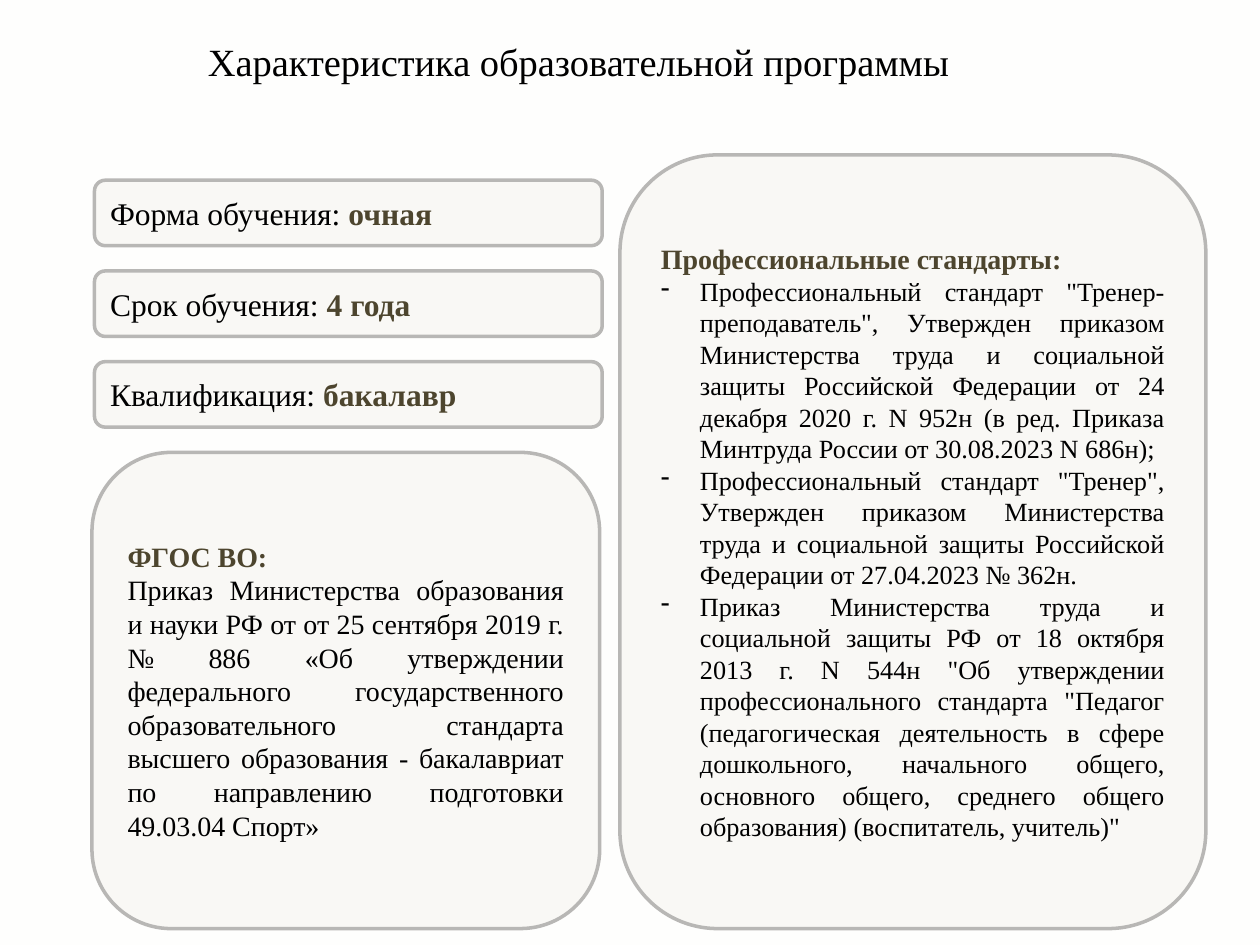
from dataclasses import dataclass

from lxml.etree import SubElement
from pptx import Presentation
from pptx.dml.color import RGBColor
from pptx.enum.shapes import MSO_SHAPE
from pptx.enum.text import MSO_ANCHOR, MSO_AUTO_SIZE, PP_ALIGN
from pptx.oxml.ns import qn
from pptx.util import Inches, Pt

COLORS = {
    "background": "FEFEFD",
    "card": "F9F8F5",
    "border": "B8B7B5",
    "text": "000000",
    "accent": "4D452E",
}
FONT = "Times New Roman"
COLUMNS, ROWS = 1000, 750  # fine grid over the whole slide
SLIDE_WIDTH, SLIDE_HEIGHT = Inches(10), Inches(7.5)
HANGING_INDENT = Inches(0.31)


@dataclass(frozen=True)
class Area:
    column: int
    row: int
    columns: int
    rows: int

    def place(self, shape) -> None:
        shape.left, shape.top, shape.width, shape.height = self.lengths()

    def lengths(self) -> tuple[int, int, int, int]:
        return (
            SLIDE_WIDTH * self.column // COLUMNS,
            SLIDE_HEIGHT * self.row // ROWS,
            SLIDE_WIDTH * self.columns // COLUMNS,
            SLIDE_HEIGHT * self.rows // ROWS,
        )


@dataclass(frozen=True)
class Span:
    text: str
    size: int
    accent: bool = False


@dataclass(frozen=True)
class Line:
    spans: tuple[Span, ...]
    justified: bool = False
    dashed: bool = False


@dataclass(frozen=True)
class Card:
    area: Area
    lines: tuple[Line, ...]


def rgb(name: str) -> RGBColor:
    return RGBColor.from_string(COLORS[name])


def add_dash(paragraph) -> None:
    properties = paragraph._p.get_or_add_pPr()
    properties.set("marL", str(HANGING_INDENT))
    properties.set("indent", str(-HANGING_INDENT))
    SubElement(properties, qn("a:buFontTx"))
    SubElement(properties, qn("a:buChar")).set("char", "-")


def write_line(paragraph, line: Line) -> None:
    paragraph.alignment = PP_ALIGN.JUSTIFY if line.justified else PP_ALIGN.LEFT
    if line.dashed:
        add_dash(paragraph)
    for span in line.spans:
        run = paragraph.add_run()
        run.text = span.text
        run.font.name = FONT
        run.font.size = Pt(span.size)
        run.font.bold = span.accent
        run.font.color.rgb = rgb("accent" if span.accent else "text")


def draw_card(slide, card: Card) -> None:
    shape = slide.shapes.add_shape(MSO_SHAPE.ROUNDED_RECTANGLE, *card.area.lengths())
    shape.shadow.inherit = False
    shape.fill.solid()
    shape.fill.fore_color.rgb = rgb("card")
    shape.line.color.rgb = rgb("border")
    shape.line.width = Pt(2)
    frame = shape.text_frame
    frame.word_wrap = True
    frame.vertical_anchor = MSO_ANCHOR.MIDDLE
    for index, line in enumerate(card.lines):
        paragraph = frame.add_paragraph() if index else frame.paragraphs[0]
        write_line(paragraph, line)


def draw_title(slide, text: str) -> None:
    title = slide.shapes.title
    Area(155, 25, 615, 47).place(title)
    frame = title.text_frame
    frame.word_wrap = False
    frame.auto_size = MSO_AUTO_SIZE.SHAPE_TO_FIT_TEXT
    frame.vertical_anchor = MSO_ANCHOR.TOP
    write_line(frame.paragraphs[0], Line((Span(text, 22),)))


# Study facts, stacked at an equal pitch
FACTS = (
    ("Форма обучения: ", "очная"),
    ("Срок обучения: ", "4 года"),
    ("Квалификация: ", "бакалавр"),
)
FIRST_FACT_ROW, FACT_PITCH = 143, 72
FACT_CARDS = tuple(
    Card(
        Area(75, FIRST_FACT_ROW + index * FACT_PITCH, 403, 52),
        (Line((Span(label, 18), Span(value, 18, accent=True))),),
    )
    for index, (label, value) in enumerate(FACTS)
)

# Federal educational standard
FEDERAL_CARD = Card(
    Area(73, FIRST_FACT_ROW + len(FACTS) * FACT_PITCH, 403, 378),
    (
        Line((Span("ФГОС ВО:", 16, accent=True),)),
        Line(
            (Span(
                "Приказ Министерства образования и науки РФ от от 25 сентября 2019 г. "
                "№ 886 «Об утверждении федерального государственного образовательного "
                "стандарта высшего образования - бакалавриат по направлению подготовки "
                "49.03.04 Спорт»",
                16,
            ),),
            justified=True,
        ),
    ),
)

# Professional standards
STANDARDS = (
    'Профессиональный стандарт "Тренер-преподаватель", Утвержден приказом '
    "Министерства труда и социальной защиты Российской Федерации от 24 декабря "
    "2020 г. N 952н (в ред. Приказа Минтруда России от 30.08.2023 N 686н);",
    'Профессиональный стандарт "Тренер", Утвержден приказом Министерства труда '
    "и социальной защиты Российской Федерации от 27.04.2023 № 362н.",
    "Приказ Министерства труда и социальной защиты РФ от 18 октября 2013 г. "
    'N 544н "Об утверждении профессионального стандарта "Педагог (педагогическая '
    "деятельность в сфере дошкольного, начального общего, основного общего, "
    'среднего общего образования) (воспитатель, учитель)"',
)
STANDARDS_CARD = Card(
    Area(492, 123, 465, 614),
    (
        Line((Span("Профессиональные стандарты:", 16, accent=True),)),
        *(Line((Span(text, 15),), justified=True, dashed=True) for text in STANDARDS),
    ),
)


def main() -> None:
    presentation = Presentation()
    presentation.slide_width, presentation.slide_height = SLIDE_WIDTH, SLIDE_HEIGHT
    slide = presentation.slides.add_slide(presentation.slide_layouts[5])
    slide.background.fill.solid()
    slide.background.fill.fore_color.rgb = rgb("background")

    draw_title(slide, "Характеристика образовательной программы")
    for card in (*FACT_CARDS, FEDERAL_CARD, STANDARDS_CARD):
        draw_card(slide, card)
    presentation.save("out.pptx")


if __name__ == "__main__":
    main()
